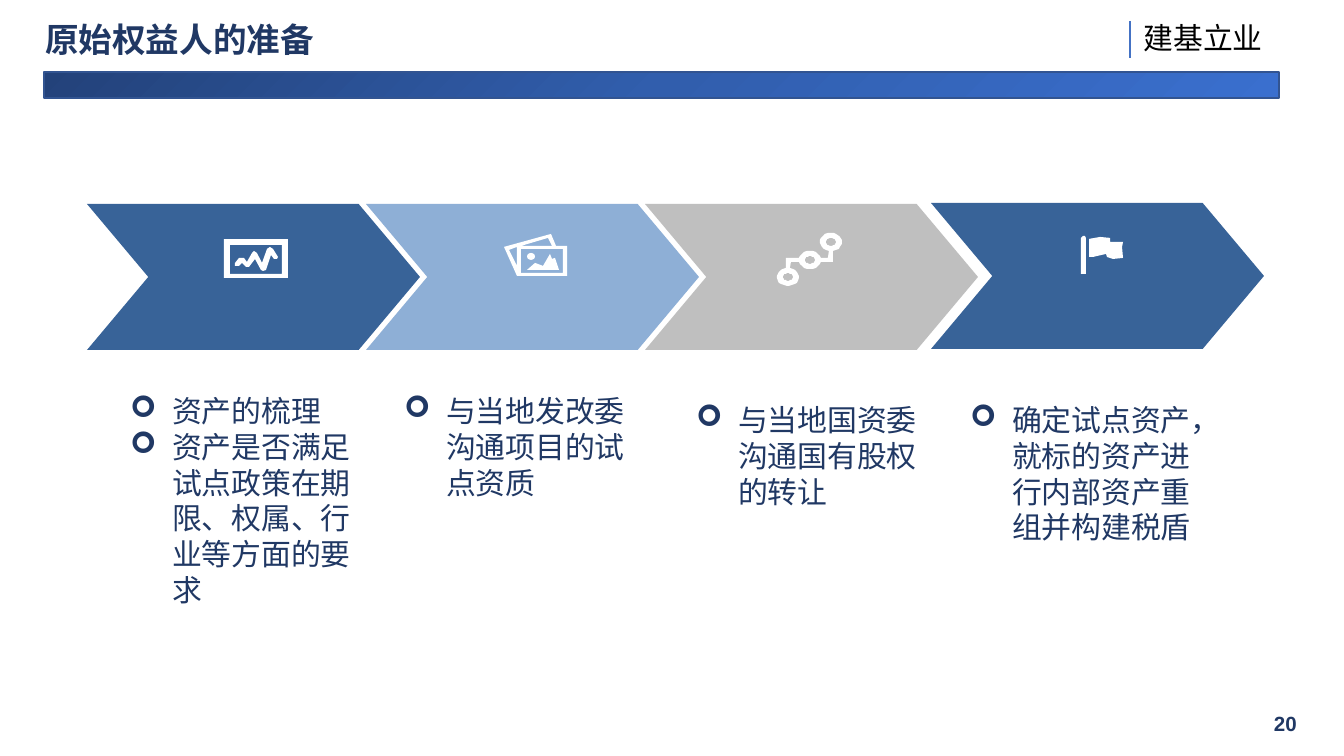
import copy
import math

import pptx
import pptx.dml.color
import pptx.enum.shapes
import pptx.enum.text
import pptx.oxml.ns
import pptx.util
from lxml import etree

SCALE = 914400 / 134.4
HEX = {
    "navy": "203864", "black": "000000", "white": "FFFFFF",
    "blue": "386398", "sky": "8EAFD6", "gray": "BFBFBF",
    "rule": "4472C4", "edge": "325491",
    "dark": "23427A", "mid": "315EAD", "light": "3A6FCE",
}
KIND = pptx.enum.shapes.MSO_SHAPE
ALIGN = pptx.enum.text.PP_ALIGN
CJK = "Noto Sans CJK SC"


def emu(px):
    return pptx.util.Emu(round(px * SCALE))


def rgb(name):
    return pptx.dml.color.RGBColor.from_string(HEX[name])


def tag(node, name, **attrs):
    return etree.SubElement(node, pptx.oxml.ns.qn(name), **attrs)


def rect(left, top, right, base):
    return [(left, top), (right, top), (right, base), (left, base)]


def arc(mid, wide, high, start, end):
    """Points on an ellipse between two angles in degrees, clockwise from the right."""
    count = max(2, round(abs(end - start) / 15))
    turns = [math.radians(start + (end - start) * i / count) for i in range(count + 1)]
    return [(mid[0] + wide * math.cos(t), mid[1] + high * math.sin(t)) for t in turns]


class Deck:
    def __init__(self, width, height):
        self.file = pptx.Presentation()
        self.file.slide_width, self.file.slide_height = emu(width), emu(height)
        self.slide = self.file.slides.add_slide(self.file.slide_layouts[6])
        self.shapes = self.slide.shapes

    def paint(self, shape, color):
        shape.shadow.inherit = False
        shape.fill.solid()
        shape.fill.fore_color.rgb = rgb(color)
        shape.line.fill.background()
        return shape

    def shape(self, kind, box, color):
        return self.paint(self.shapes.add_shape(kind, *map(emu, box)), color)

    def outline(self, *loops, color="white"):
        """Draw closed loops as one shape; inner loops are holes."""
        pen = self.shapes.build_freeform(*loops[0][0], scale=SCALE)
        for loop in loops:
            pen.move_to(*loop[0])
            pen.add_line_segments(loop[1:], close=True)
        return self.paint(pen.convert_to_shape(), color)

    def bar(self, box):
        bar = self.shape(KIND.RECTANGLE, box, "dark")
        bar.line.color.rgb = rgb("edge")
        bar.line.width = pptx.util.Pt(1)
        bar.fill.gradient()
        bar.fill.gradient_angle = 315
        stops = bar.fill.gradient_stops
        for stop, color, place in zip(stops, ("dark", "light"), (0, 1)):
            stop.color.rgb, stop.position = rgb(color), place
        first = bar._element.spPr.find(".//" + pptx.oxml.ns.qn("a:gs"))
        first.addnext(copy.deepcopy(first))
        half = bar.fill.gradient_stops[1]
        half.color.rgb, half.position = rgb("mid"), 0.5

    def line(self, start, end, color, width):
        line = self.shapes.add_connector(
            pptx.enum.shapes.MSO_CONNECTOR.STRAIGHT, *map(emu, start + end))
        line.line.color.rgb = rgb(color)
        line.line.width = pptx.util.Pt(width)
        tag(line._element.spPr, "a:effectLst")

    def label(self, shape, lines, size, color="navy", font=CJK, bold=False,
              align=ALIGN.LEFT, middle=True, bullet=False, space=None):
        frame = shape.text_frame
        frame.word_wrap = True
        anchor = pptx.enum.text.MSO_ANCHOR
        frame.vertical_anchor = anchor.MIDDLE if middle else anchor.TOP
        frame.text = "\n".join(lines)
        for para in frame.paragraphs:
            para.alignment = align
            if space:
                para.line_spacing = space
            props = para._p.get_or_add_pPr()
            if bullet:
                props.set("marL", str(emu(42)))
                props.set("indent", str(emu(-42)))
                tag(props, "a:buFont", typeface="Wingdings")
                tag(props, "a:buChar", char="➢")
            para.font.size = pptx.util.Pt(size)
            para.font.bold = bold
            para.font.color.rgb = rgb(color)
            para.font.name = font
            tag(props.find(pptx.oxml.ns.qn("a:defRPr")), "a:ea", typeface=font)

    def text(self, box, lines, size, **style):
        self.label(self.shapes.add_textbox(*map(emu, box)), lines, size, **style)

    def chart(self):
        self.outline(rect(224, 239, 288, 278), rect(230, 245, 282, 274))
        self.outline([
            (235, 266), (239, 266), (242, 263), (246, 267), (249, 267), (255, 259),
            (261, 270), (263, 271), (266, 270), (271, 255), (274, 259), (277, 259),
            (278, 257), (273, 249), (270, 247), (267, 249), (262, 263), (257, 253),
            (254, 251), (252, 253), (247, 262), (244, 258), (239, 258), (235, 263)])

    def photos(self):
        self.outline(
            [(556, 246), (551, 234), (504, 247), (517, 276), (567, 276), (567, 246)],
            [(552, 246), (521, 246), (548, 238)],
            [(509, 250), (517, 247), (517, 266)],
            rect(521, 249, 563, 273))
        self.outline([(555, 258), (552, 259), (550, 254), (543, 266), (535, 263),
                      (527, 270), (559, 270)])
        self.shape(KIND.OVAL, (527, 253, 8, 7), "white")

    def route(self):
        """Three rings joined by a stepped path."""
        low, mid, top = (788, 277), (810, 260), (831, 242)
        edge = (
            arc(top, 11, 9, 0, -260) + [(828, 258)]
            + arc(mid, 11, 9, -12, -168) + [(786, 258)]
            + arc(low, 11, 9, -100, -440) + [(791, 262)]
            + arc(mid, 11, 9, 168, 12) + [(833, 262)]
            + arc(top, 11, 9, 78, 0))
        self.outline(edge, *(arc(spot, 5, 4, 0, 360) for spot in (low, mid, top)))

    def flag(self):
        self.outline([
            (1123, 242), (1110, 242), (1110, 238), (1100, 237), (1089, 239), (1089, 257),
            (1093, 257), (1106, 254), (1107, 257), (1113, 259), (1123, 258), (1122, 247)])
        self.outline([(1081, 238), (1083, 236), (1085, 236), (1086, 238),
                      (1086, 274), (1081, 274)])


def main():
    deck = Deck(1344, 756)
    deck.bar((44, 72, 1235, 26))
    badge = deck.shape(KIND.SNIP_2_DIAG_RECTANGLE, (1133, 16, 181, 44), "white")
    badge.adjustments[0], badge.adjustments[1] = 0, 0.26
    frame = badge.text_frame
    frame.margin_left = frame.margin_right = emu(5)
    frame.margin_top = frame.margin_bottom = emu(5)
    deck.label(badge, ["建基立业"], 16, color="black")
    deck.line((1130, 21), (1130, 58), "rule", 1.5)
    deck.text((32, 20, 792, 44), ["原始权益人的准备"], 18, bold=True, space=0.9)
    deck.text((1008, 703, 302, 40), ["20"], 11, font="Arial", bold=True,
              align=ALIGN.RIGHT)

    steps = [
        ((87, 204), "blue", deck.chart, (117, 386, 254, 267),
         ["资产的梳理", "资产是否满足试点政策在期限、权属、行业等方面的要求"]),
        ((366, 204), "sky", deck.photos, (391, 386, 254, 122),
         ["与当地发改委沟通项目的试点资质"]),
        ((645, 204), "gray", deck.route, (683, 395, 254, 122),
         ["与当地国资委沟通国有股权的转让"]),
        ((931, 203), "blue", deck.flag, (957, 395, 254, 159),
         ["确定试点资产，就标的资产进行内部资产重组并构建税盾"]),
    ]
    for spot, color, icon, box, lines in steps:
        arrow = deck.shape(KIND.CHEVRON, (*spot, 333, 146), color)
        arrow.adjustments[0] = 0.42
        icon()
        deck.text(box, lines, 16, middle=False, bullet=True)
    deck.file.save("out.pptx")


if __name__ == "__main__":
    main()
